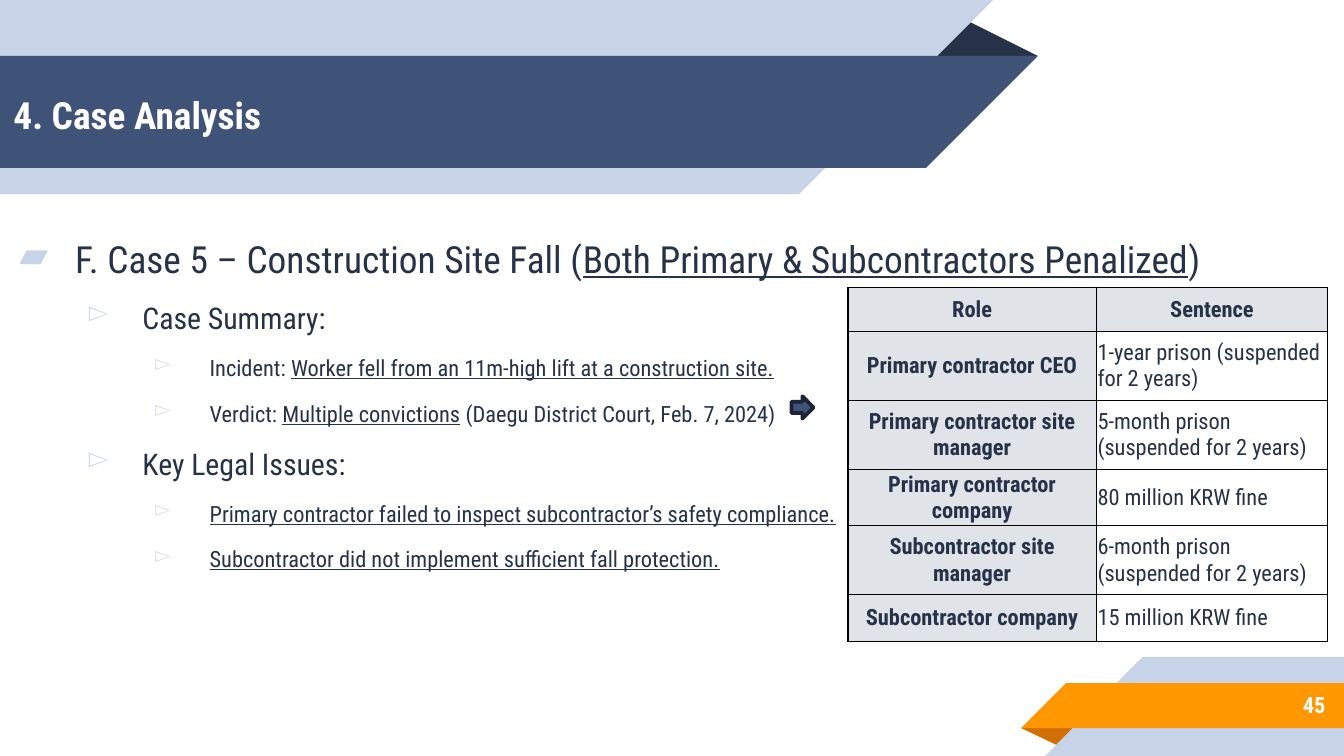
from lxml import etree
from pptx import Presentation
from pptx import util as u
from pptx.dml.color import RGBColor
from pptx.enum import shapes, text
from pptx.oxml.ns import qn

Pt = u.Pt
FONT = "Roboto Condensed"
COLORS = {
    "navy": "3F5378", "ink": "263248", "pale": "C7D3E6", "orange": "FF9800",
    "rust": "D26F00", "white": "FFFFFF", "grey": "E0E4E9", "outline": "1C2435",
    "black": "000000",
}


def style(para, size, color, bold=False, align=text.PP_ALIGN.LEFT):
    para.alignment = align
    para.font.name = FONT
    para.font.size = Pt(size)
    para.font.bold = bold
    para.font.color.rgb = RGBColor.from_string(COLORS[color])


def add_box(left, top, width, height, anchor):
    """Add a wrapping text box without insets and return its text frame."""
    frame = page.shapes.add_textbox(Pt(left), Pt(top), Pt(width), Pt(height)).text_frame
    frame.margin_left = frame.margin_right = frame.margin_top = frame.margin_bottom = 0
    frame.word_wrap = True
    frame.vertical_anchor = anchor
    return frame


deck = Presentation()
deck.slide_width, deck.slide_height = Pt(720), Pt(405)
page = deck.slides.add_slide(deck.slide_layouts[6])

# Ribbons at the top left and bottom right, from back to front
ribbons = [
    ("rust", [(547, 389.5), (578, 389.5), (568, 399.5)]),
    ("pale", [(612, 352), (720, 352), (720, 405), (559.5, 405)]),
    ("orange", [(571, 366), (720, 366), (720, 389.5), (547, 389.5)]),
    ("ink", [(495.5, 30), (515.5, 10), (556.5, 30)]),
    ("pale", [(0, 0), (532, 0), (427.5, 104.5), (0, 104.5)]),
    ("navy", [(0, 30), (556.5, 30), (496, 90.5), (0, 90.5)]),
]
for color, points in ribbons:
    builder = page.shapes.build_freeform(*points[0], scale=Pt(1))
    builder.add_line_segments(points[1:], close=True)
    ribbon = builder.convert_to_shape()
    ribbon.shadow.inherit = False
    ribbon.fill.solid()
    ribbon.fill.fore_color.rgb = RGBColor.from_string(COLORS[color])
    ribbon.line.fill.background()

# Title and page number
title = add_box(7.2, 31, 510, 60.5, text.MSO_ANCHOR.MIDDLE).paragraphs[0]
title.text = "4. Case Analysis"
style(title, 20, "white", bold=True)

number = add_box(600, 365, 110, 25, text.MSO_ANCHOR.MIDDLE).paragraphs[0]
number.text = "45"
style(number, 12, "white", bold=True, align=text.PP_ALIGN.RIGHT)

# Outline: level and wording, with underlined parts between underscores
outline = [
    (0, "F. Case 5 – Construction Site Fall (_Both Primary & Subcontractors Penalized_)"),
    (1, "Case Summary:"),
    (2, "Incident: _Worker fell from an 11m-high lift at a construction site._"),
    (2, "Verdict: _Multiple convictions_ (Daegu District Court, Feb. 7, 2024)"),
    (1, "Key Legal Issues:"),
    (2, "_Primary contractor failed to inspect subcontractor’s safety compliance._"),
    (2, "_Subcontractor did not implement sufficient fall protection._"),
]
body = add_box(4.3, 126.5, 705, 190, text.MSO_ANCHOR.TOP)
for index, (level, wording) in enumerate(outline):
    para = body.add_paragraph() if index else body.paragraphs[0]
    para.level = level
    para.space_before = Pt(10 if index else 0)
    style(para, 20 - 4 * level, "ink")
    for part, words in enumerate(wording.split("_")):
        if words:
            span = para.add_run()
            span.text = words
            span.font.underline = part % 2 == 1
    props = para._p.get_or_add_pPr()
    props.set("marL", str(Pt(36 * (level + 1))))
    props.set("indent", str(Pt(-30)))
    bullet_color = etree.Element(qn("a:buClr"))
    etree.SubElement(bullet_color, qn("a:srgbClr"), val=COLORS["pale"])
    bullet = etree.Element(qn("a:buChar"), char="▻" if level else "▰")
    defaults = props.find(qn("a:defRPr"))
    defaults.addprevious(bullet_color)
    defaults.addprevious(bullet)

# Sentences
rows = [
    (23.5, "Role", "Sentence"),
    (37, "Primary contractor CEO", "1-year prison (suspended for 2 years)"),
    (37, "Primary contractor site manager", "5-month prison (suspended for 2 years)"),
    (29.5, "Primary contractor company", "80 million KRW fine"),
    (37, "Subcontractor site manager", "6-month prison (suspended for 2 years)"),
    (25, "Subcontractor company", "15 million KRW fine"),
]
table = page.shapes.add_table(len(rows), 2, Pt(454.3), Pt(154), Pt(257), Pt(189)).table
table.first_row = table.horz_banding = False
table.columns[0].width, table.columns[1].width = Pt(133), Pt(124)
for r, (height, *entries) in enumerate(rows):
    table.rows[r].height = Pt(height)
    for c, entry in enumerate(entries):
        cell = table.cell(r, c)
        heading = r == 0 or c == 0
        cell.margin_left = cell.margin_right = Pt(0.7)
        cell.margin_top = cell.margin_bottom = Pt(0.7)
        cell.vertical_anchor = text.MSO_ANCHOR.MIDDLE
        cell.text = entry
        style(cell.text_frame.paragraphs[0], 12, "ink", bold=heading,
              align=text.PP_ALIGN.CENTER if heading else text.PP_ALIGN.LEFT)
        for side in ("a:lnL", "a:lnR", "a:lnT", "a:lnB"):
            border = etree.SubElement(cell._tc.get_or_add_tcPr(), qn(side), w=str(Pt(0.75)))
            paint = etree.SubElement(border, qn("a:solidFill"))
            etree.SubElement(paint, qn("a:srgbClr"), val=COLORS["black"])
        if heading:
            cell.fill.solid()
            cell.fill.fore_color.rgb = RGBColor.from_string(COLORS["grey"])
        else:
            cell.fill.background()

# Arrow from the verdict to the sentences
arrow = page.shapes.add_shape(shapes.MSO_SHAPE.RIGHT_ARROW, Pt(424), Pt(212.3), Pt(11.8), Pt(12))
arrow.shadow.inherit = False
arrow.fill.solid()
arrow.fill.fore_color.rgb = RGBColor.from_string(COLORS["navy"])
arrow.line.color.rgb = RGBColor.from_string(COLORS["outline"])
arrow.line.width = Pt(2)

deck.save("out.pptx")
